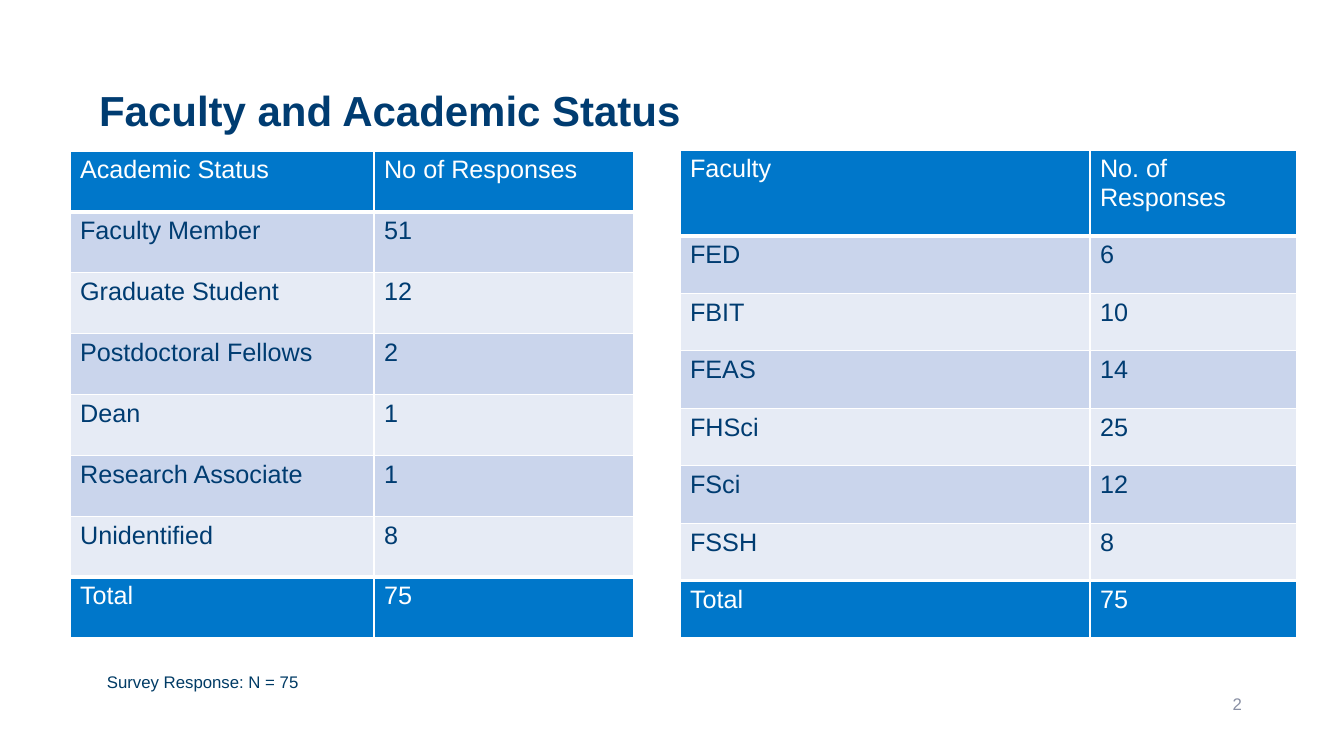
from lxml import etree
from pptx import Presentation
from pptx import util as u
from pptx.dml.color import RGBColor
from pptx.enum import text
from pptx.oxml.ns import qn

TITLE = "Faculty and Academic Status"
NOTE = "Survey Response: N = 75"
PAGE_NUMBER = "2"
FACULTY = {
    "place": (680, 150), "height": 488, "header": 86, "columns": (410, 207),
    "rows": [("Faculty", "No. of Responses"), ("FED", "6"), ("FBIT", "10"),
             ("FEAS", "14"), ("FHSci", "25"), ("FSci", "12"), ("FSSH", "8"),
             ("Total", "75")],
}
STATUS = {
    "place": (70, 151), "height": 487, "header": 61, "columns": (304, 260),
    "rows": [("Academic Status", "No of Responses"), ("Faculty Member", "51"),
             ("Graduate Student", "12"), ("Postdoctoral Fellows", "2"),
             ("Dean", "1"), ("Research Associate", "1"),
             ("Unidentified", "8"), ("Total", "75")],
}
NAVY, BLUE, WHITE = "003C71", "0077CA", "FFFFFF"
BANDS = ("CAD5EC", "E6EBF5")
SCALE = 12192000 / 1344


def px(length):
    return u.Emu(round(length * SCALE))


def color(value):
    return RGBColor.from_string(value)


def write(frame, words, size, tint, bold=False):
    para = frame.paragraphs[0]
    span = para.add_run()
    span.text = words
    formats = {"name": "Arial", "size": u.Pt(size), "bold": bold}
    for name, value in formats.items():
        setattr(span.font, name, value)
    span.font.color.rgb = color(tint)
    return para


def place(shape, left, top, width, height):
    edges = {"left": left, "top": top, "width": width, "height": height}
    for name, value in edges.items():
        setattr(shape, name, px(value))


def add_label(page, area, words, tint):
    box = page.shapes.add_textbox(*map(px, area))
    box.text_frame.word_wrap = True
    return box, write(box.text_frame, words, 12, tint)


def add_borders(cell, top, bottom):
    properties = cell._tc.get_or_add_tcPr()
    for side, points in (("L", 1), ("R", 1), ("T", top), ("B", bottom)):
        line = etree.SubElement(properties, qn(f"a:ln{side}"), w=str(u.Pt(points)))
        fill = etree.SubElement(line, qn("a:solidFill"))
        etree.SubElement(fill, qn("a:srgbClr"), val=WHITE)


def add_counts(page, data):
    rows, columns = data["rows"], data["columns"]
    last = len(rows) - 1
    area = (*data["place"], sum(columns), data["height"])
    table = page.shapes.add_table(len(rows), len(columns), *map(px, area)).table
    table.last_row = True
    for column, width in zip(table.columns, columns):
        column.width = px(width)
    body_height = (data["height"] - data["header"]) / last
    for index, row in enumerate(rows):
        table.rows[index].height = px(body_height if index else data["header"])
        strong = index in (0, last)
        top = 3 if index in (1, last) else 1
        bottom = 3 if index in (0, last - 1) else 1
        for cell, words in zip(table.rows[index].cells, row):
            add_borders(cell, top, bottom)
            cell.fill.solid()
            cell.fill.fore_color.rgb = color(BLUE if strong else BANDS[(index - 1) % 2])
            write(cell.text_frame, words, 18, WHITE if strong else NAVY)


def main():
    deck = Presentation()
    deck.slide_width, deck.slide_height = px(1344), px(756)
    page = deck.slides.add_slide(deck.slide_layouts[5])

    box, para = add_label(page, (950, 684, 302, 40), PAGE_NUMBER, "888FA3")
    box.text_frame.vertical_anchor = text.MSO_ANCHOR.MIDDLE
    para.alignment = text.PP_ALIGN.RIGHT
    add_label(page, (97, 667, 1115, 50), NOTE, "003B65")

    for data in (FACULTY, STATUS):
        add_counts(page, data)

    title = page.shapes.title
    place(title, 89, 40, 1163, 146)
    title.text_frame.vertical_anchor = text.MSO_ANCHOR.MIDDLE
    para = write(title.text_frame, TITLE, 30, NAVY, True)
    para.alignment = text.PP_ALIGN.LEFT
    para.line_spacing = 0.9

    deck.save("out.pptx")


if __name__ == "__main__":
    main()
